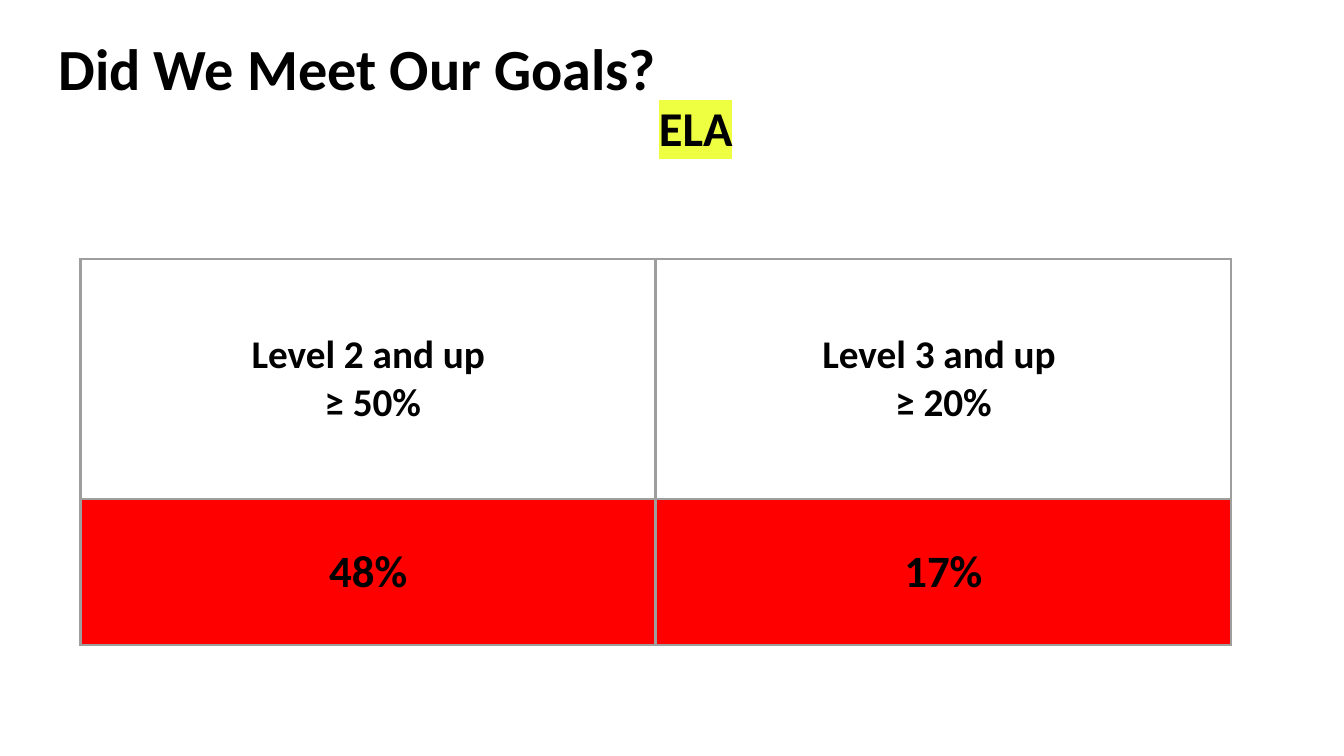
"""Build the goals slide with a title, a subject tag and a result table."""
from lxml import etree
from pptx import Presentation
from pptx.dml.color import RGBColor
from pptx.enum.text import MSO_ANCHOR, PP_ALIGN
from pptx.oxml.ns import qn
from pptx.util import Inches, Pt

LEFT, CENTER = PP_ALIGN.LEFT, PP_ALIGN.CENTER
MIDDLE = MSO_ANCHOR.MIDDLE
BLACK, RED, GRAY, LIME = "000000", "FF0000", "9E9E9E", "EEFF41"
PAD = Inches(0.13)
PADS = {"margin_left": PAD, "margin_right": PAD, "margin_top": PAD, "margin_bottom": PAD}

TITLE = ("Did We Meet Our Goals?", (0.45, 0.19, 12.42, 0.84), 41.6, LEFT)
TAG = ("ELA", (4.5, 0.84, 4.8, 0.85), 34.7, CENTER)
GRID = (0.8, 2.57, 11.41, 3.83)
ROWS = [
    (2.38, 28, None, ["Level 2 and up\n ≥ 50%", "Level 3 and up \n≥ 20%"]),
    (1.45, 32, RED, ["48%", "17%"]),
]


def color(code):
    return RGBColor.from_string(code)


def put(item, values):
    for name, value in values.items():
        setattr(item, name, value)


def write(frame, text, size, align):
    frame.text = text
    for para in frame.paragraphs:
        para.alignment = align
        for run in para.runs:
            put(run.font, {"name": "Calibri", "size": Pt(size), "bold": True})
            run.font.color.rgb = color(BLACK)


def add_text(slide, text, place, size, align):
    frame = slide.shapes.add_textbox(*map(Inches, place)).text_frame
    put(frame, {"word_wrap": True, **PADS})
    write(frame, text, size, align)
    return frame.paragraphs[0].runs[0]


def mark(run, code):
    light = etree.Element(qn("a:highlight"))
    etree.SubElement(light, qn("a:srgbClr"), val=code)
    run.font._element.find(qn("a:solidFill")).addnext(light)


def edge(cell, code, width):
    props = cell._tc.get_or_add_tcPr()
    for spot, side in enumerate(("lnL", "lnR", "lnT", "lnB")):
        line = etree.Element(qn(f"a:{side}"), w=str(Pt(width)))
        fill = etree.SubElement(line, qn("a:solidFill"))
        etree.SubElement(fill, qn("a:srgbClr"), val=code)
        props.insert(spot, line)


def add_grid(slide):
    count = len(ROWS[0][3])
    table = slide.shapes.add_table(len(ROWS), count, *map(Inches, GRID)).table
    put(table, {"first_row": False, "horz_banding": False})
    for col in table.columns:
        col.width = Inches(GRID[2] / count)
    for r, (height, size, shade, texts) in enumerate(ROWS):
        table.rows[r].height = Inches(height)
        for c, text in enumerate(texts):
            cell = table.cell(r, c)
            put(cell, {"vertical_anchor": MIDDLE, **PADS})
            write(cell.text_frame, text, size, CENTER)
            if shade:
                cell.fill.solid()
                cell.fill.fore_color.rgb = color(shade)
            else:
                cell.fill.background()
            edge(cell, GRAY, 2.25)


def main():
    deck = Presentation()
    put(deck, {"slide_width": Inches(13.33), "slide_height": Inches(7.5)})
    slide = deck.slides.add_slide(deck.slide_layouts[6])
    add_grid(slide)
    mark(add_text(slide, *TAG), LIME)
    add_text(slide, *TITLE)
    deck.save("out.pptx")


if __name__ == "__main__":
    main()
